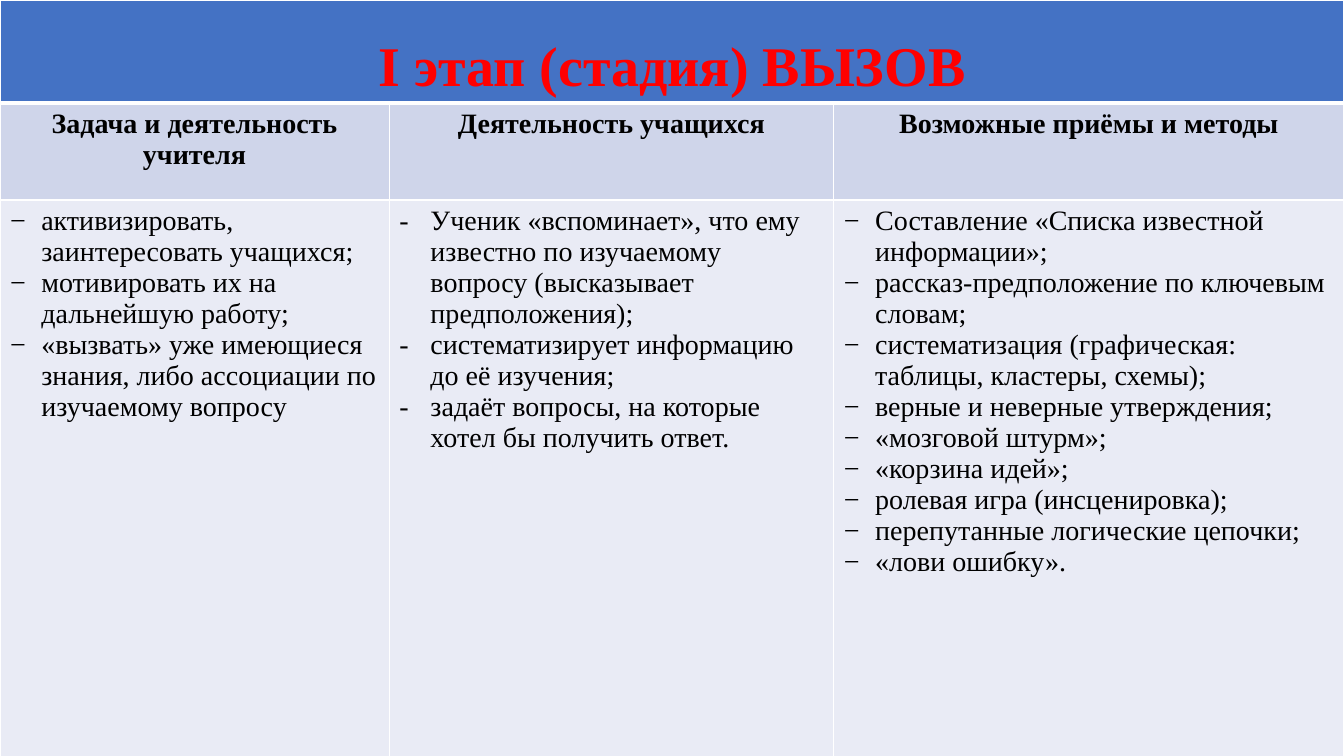
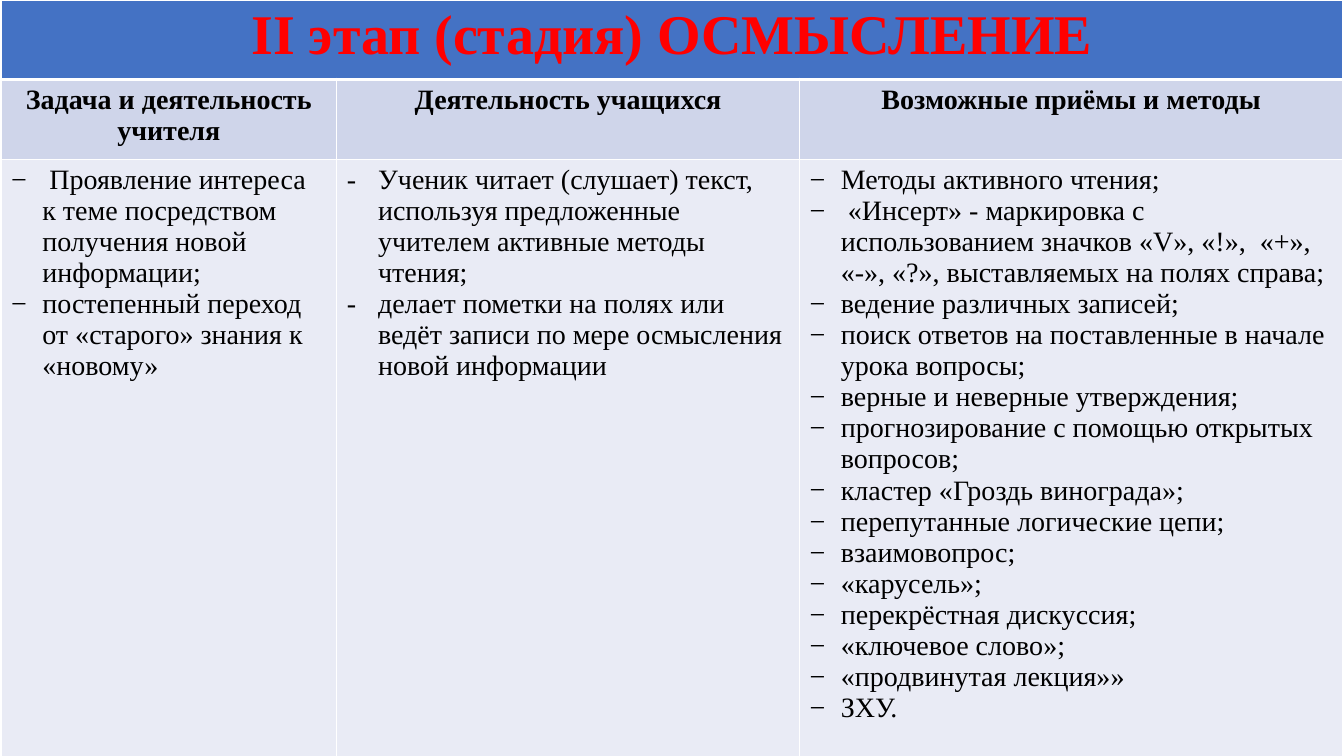
import pptx
import pptx.dml.color
import pptx.enum.text
import pptx.oxml
import pptx.oxml.ns
import pptx.util
from dataclasses import dataclass

Inches = pptx.util.Inches
Pt = pptx.util.Pt
ALIGN = pptx.enum.text.PP_ALIGN


@dataclass(frozen=True)
class Theme:
    font: str = "Times New Roman"
    title_size: int = 40
    text_size: int = 20
    title_color: str = "FF0000"
    text_color: str = "000000"
    title_fill: str = "4472C4"
    heading_fill: str = "CFD5EA"
    body_fill: str = "E9EBF5"
    border_color: str = "FFFFFF"
    thin_border: int = 1
    thick_border: int = 3
    indent: float = 0.31


THEME = Theme()
HEADINGS = ["Задача и деятельность учителя", "Деятельность учащихся",
            "Возможные приёмы и методы"]
BULLETS = ["−", "-", "−"]

# Content of the stages: one list of points per column
STAGES = [
    {
        "title": "I этап (стадия) ВЫЗОВ",
        "left": 0,
        "columns": [3.86, 4.41, 5.06],
        "rows": [1.02, 0.96, 5.57],
        "title_margin": 0.36,
        "points": [
            ["активизировать, заинтересовать учащихся;",
             "мотивировать их на дальнейшую работу;",
             "«вызвать» уже имеющиеся знания, либо ассоциации по изучаемому вопросу"],
            ["Ученик «вспоминает», что ему известно по изучаемому вопросу "
             "(высказывает предположения);",
             "систематизирует информацию до её изучения;",
             "задаёт вопросы, на которые хотел бы получить ответ."],
            ["Составление «Списка известной информации»;",
             "рассказ-предположение по ключевым словам;",
             "систематизация (графическая: таблицы, кластеры, схемы);",
             "верные и неверные утверждения;",
             "«мозговой штурм»;",
             "«корзина идей»;",
             "ролевая игра (инсценировка);",
             "перепутанные логические цепочки;",
             "«лови ошибку»."],
        ],
    },
    {
        "title": "II этап (стадия) ОСМЫСЛЕНИЕ",
        "left": 0.01,
        "columns": [3.33, 4.59, 5.39],
        "rows": [0.79, 0.79, 6.64],
        "title_margin": 0.05,
        "points": [
            [" Проявление интереса к теме посредством получения новой информации;",
             "постепенный переход от «старого» знания к «новому»"],
            ["Ученик читает (слушает) текст, используя предложенные учителем "
             "активные методы чтения;",
             "делает пометки на полях или ведёт записи по мере осмысления "
             "новой информации"],
            ["Методы активного чтения;",
             " «Инсерт» - маркировка с использованием значков «V», «!»,  «+», "
             "«-», «?», выставляемых на полях справа;",
             "ведение различных записей;",
             "поиск ответов на поставленные в начале урока вопросы;",
             "верные и неверные утверждения;",
             "прогнозирование с помощью открытых вопросов;",
             "кластер «Гроздь винограда»;",
             "перепутанные логические цепи;",
             "взаимовопрос;",
             "«карусель»;",
             "перекрёстная дискуссия;",
             "«ключевое слово»;",
             "«продвинутая лекция»»",
             "ЗХУ."],
        ],
    },
]


def color(value):
    return pptx.dml.color.RGBColor.from_string(value)


def add_xml(parent, xml):
    namespace = pptx.oxml.ns.nsdecls("a")
    parent.append(pptx.oxml.parse_xml(xml.replace("NS", namespace, 1)))


def style_cell(cell, fill, top=THEME.thin_border, bottom=THEME.thin_border):
    """Draw the four borders, then the fill that must follow them."""
    properties = cell._tc.get_or_add_tcPr()
    widths = {"lnL": THEME.thin_border, "lnR": THEME.thin_border,
              "lnT": top, "lnB": bottom}
    for side, width in widths.items():
        add_xml(properties,
                f'<a:{side} NS w="{Pt(width)}"><a:solidFill>'
                f'<a:srgbClr val="{THEME.border_color}"/>'
                f'</a:solidFill></a:{side}>')
    cell.fill.solid()
    cell.fill.fore_color.rgb = color(fill)


def add_span(para, text, size=THEME.text_size, ink=THEME.text_color, bold=False):
    span = para.add_run()
    span.text = text
    span.font.name = THEME.font
    span.font.size = Pt(size)
    span.font.bold = bold
    span.font.color.rgb = color(ink)


def write_centered(cell, text, **style):
    para = cell.text_frame.paragraphs[0]
    para.alignment = ALIGN.CENTER
    add_span(para, text, bold=True, **style)


def write_bullets(cell, points, bullet):
    frame = cell.text_frame
    for index, point in enumerate(points):
        para = frame.add_paragraph() if index else frame.paragraphs[0]
        properties = para._p.get_or_add_pPr()
        properties.set("marL", str(Inches(THEME.indent)))
        properties.set("indent", str(-Inches(THEME.indent)))
        add_xml(properties, f'<a:buFont NS typeface="{THEME.font}"/>')
        add_xml(properties, f'<a:buChar NS char="{bullet}"/>')
        add_span(para, point)


def add_stage(deck, stage):
    page = deck.slides.add_slide(deck.slide_layouts[6])
    columns, rows = stage["columns"], stage["rows"]
    table = page.shapes.add_table(
        len(rows), len(columns), Inches(stage["left"]), 0,
        Inches(sum(columns)), Inches(sum(rows))).table
    for column, width in zip(table.columns, columns):
        column.width = Inches(width)
    for row, height in zip(table.rows, rows):
        row.height = Inches(height)

    # Title band across all columns
    title = table.cell(0, 0)
    title.merge(table.cell(0, len(columns) - 1))
    title.margin_top = Inches(stage["title_margin"])
    write_centered(title, stage["title"], size=THEME.title_size,
                   ink=THEME.title_color)

    # Heading and list of each column
    for index, heading in enumerate(HEADINGS):
        band, head, body = (table.cell(row, index) for row in range(3))
        style_cell(band, THEME.title_fill, bottom=THEME.thick_border)
        style_cell(head, THEME.heading_fill, top=THEME.thick_border)
        style_cell(body, THEME.body_fill)
        write_centered(head, heading)
        write_bullets(body, stage["points"][index], BULLETS[index])


def main():
    deck = pptx.Presentation()
    deck.slide_width = Inches(13.33)
    deck.slide_height = Inches(7.5)
    for stage in STAGES:
        add_stage(deck, stage)
    deck.save("out.pptx")


if __name__ == "__main__":
    main()
